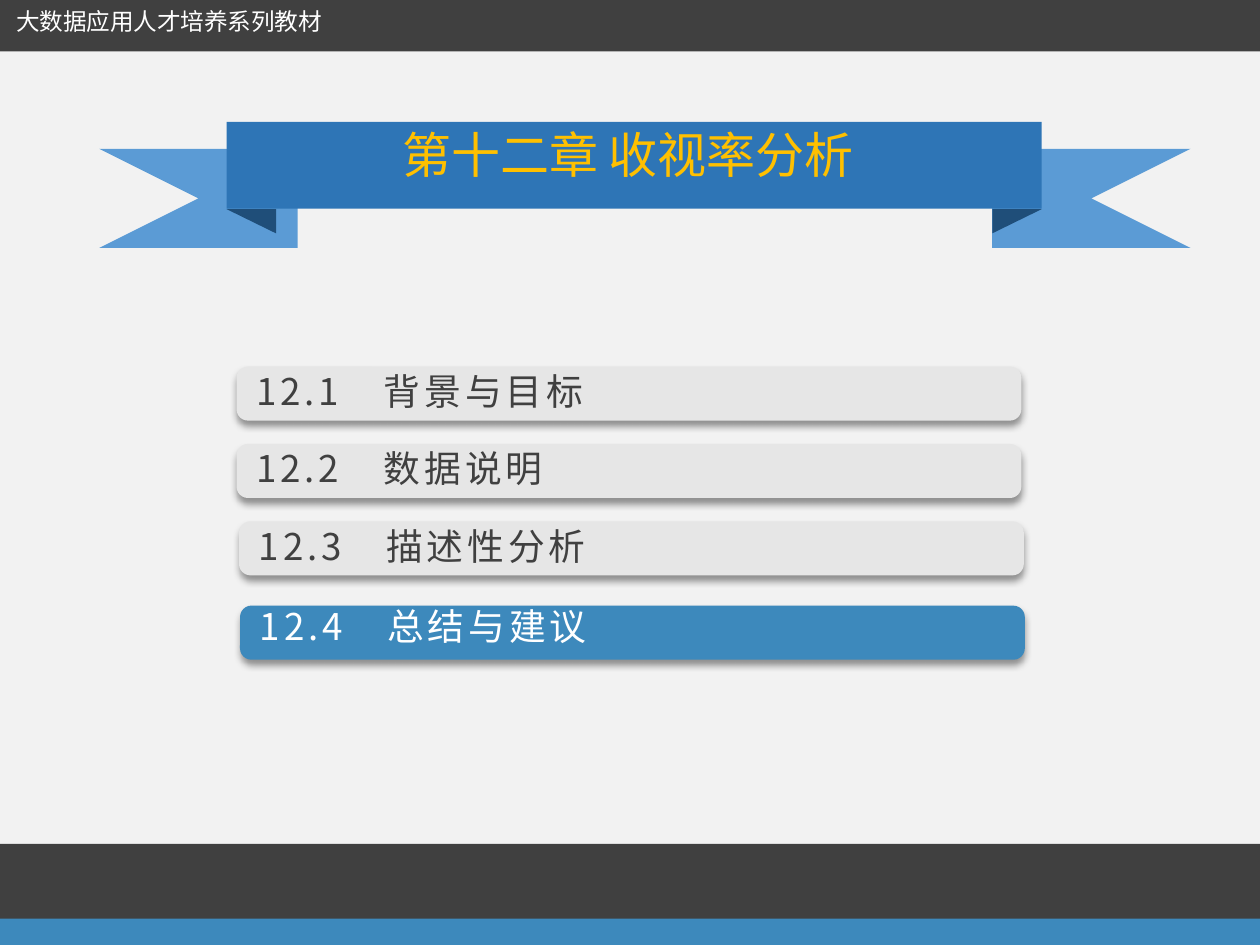
from dataclasses import dataclass

from lxml import etree
from pptx import Presentation
from pptx.dml.color import RGBColor
from pptx.enum.shapes import MSO_SHAPE
from pptx.enum.text import MSO_ANCHOR, MSO_AUTO_SIZE, PP_ALIGN
from pptx.oxml.ns import qn
from pptx.util import Cm, Pt

RECT = MSO_SHAPE.RECTANGLE
ROUND = MSO_SHAPE.ROUNDED_RECTANGLE
FOLD = MSO_SHAPE.RIGHT_TRIANGLE
TOP = MSO_ANCHOR.TOP
FIXED = MSO_AUTO_SIZE.NONE
LEFT, CENTER = PP_ALIGN.LEFT, PP_ALIGN.CENTER


@dataclass
class Theme:
    font: str = "Noto Sans CJK SC"
    back: str = "F2F2F2"
    dark: str = "404040"
    blue: str = "3D89BC"
    pale: str = "E6E6E6"
    white: str = "FFFFFF"
    gold: str = "FFC000"
    band: str = "2E75B6"
    wing: str = "5B9BD5"
    fold: str = "1F4E79"
    head: float = 28
    item: float = 21
    note: float = 13.5


theme = Theme()


def paint(shape, color):
    shape.shadow.inherit = False
    shape.fill.solid()
    shape.fill.fore_color.rgb = RGBColor.from_string(color)
    shape.line.fill.background()
    return shape


def write(box, words, size, color, align=LEFT, space=0):
    frame = box.text_frame
    setup = {
        "word_wrap": False,
        "auto_size": FIXED,
        "vertical_anchor": TOP,
        "margin_left": Cm(0.19),
        "margin_right": Cm(0.19),
        "margin_top": 0,
        "margin_bottom": 0,
    }
    for name, value in setup.items():
        setattr(frame, name, value)
    line = frame.paragraphs[0]
    line.alignment = align
    run = line.add_run()
    run.text = words
    for name, value in {"name": theme.font, "size": Pt(size), "bold": False}.items():
        setattr(run.font, name, value)
    run.font.color.rgb = RGBColor.from_string(color)
    props = run.font._element
    etree.SubElement(props, qn("a:ea"), typeface=theme.font)
    if space:
        props.set("spc", str(space))


deck = Presentation()
deck.slide_width, deck.slide_height = Cm(25.4), Cm(19.05)
slide = deck.slides.add_slide(deck.slide_layouts[5])
shapes = slide.shapes
slide.background.fill.solid()
slide.background.fill.fore_color.rgb = RGBColor.from_string(theme.back)

bars = [
    (-0.03, -0.03, 25.46, 1.07, theme.dark),
    (0, 17.01, 25.4, 1.53, theme.dark),
    (0, 18.52, 25.4, 0.53, theme.blue),
]
for x, y, w, h, color in bars:
    paint(shapes.add_shape(RECT, Cm(x), Cm(y), Cm(w), Cm(h)), color)
note = shapes.add_textbox(Cm(0.03), Cm(0.14), Cm(6.76), Cm(0.84))
write(note, "大数据应用人才培养系列教材", theme.note, theme.white, CENTER)

items = [
    ("12.1　背景与目标", 4.77, 7.39, 7.44, 7.32),
    ("12.2　数据说明", 4.77, 8.95, 8.99, 6.48),
    ("12.3　描述性分析", 4.82, 10.51, 10.55, 7.32),
    ("12.4　总结与建议", 4.84, 12.21, 12.17, 7.32),
]
for words, x, y, top, wide in items:
    live = words == items[-1][0]
    card = shapes.add_shape(ROUND, Cm(x), Cm(y), Cm(15.82), Cm(1.09))
    card.adjustments[0] = 0.21
    paint(card, theme.blue if live else theme.pale)
    glow = etree.SubElement(
        card.element.spPr.find(qn("a:effectLst")), qn("a:outerShdw"),
        blurRad=str(Pt(4)), dist=str(Pt(3)), dir="5400000", rotWithShape="0")
    tint = etree.SubElement(glow, qn("a:srgbClr"), val="000000")
    etree.SubElement(tint, qn("a:alpha"), val="40000")
    label = shapes.add_textbox(Cm(x + 0.21), Cm(top), Cm(wide), Cm(1.14))
    write(label, words, theme.item, theme.white if live else theme.dark, space=220)

mid = 12.79
for side in (-1, 1):
    outer, inner, notch = (mid + side * d for d in (10.88, 7.23, 9.1))
    pen = shapes.build_freeform(outer, 2.97, scale=float(Cm(1)))
    pen.add_line_segments(
        [(inner, 2.97), (inner, 4.72), (outer, 4.72), (notch, 3.84)], close=True)
    paint(pen.convert_to_shape(), theme.wing)
    fold = shapes.add_shape(
        FOLD, Cm(mid + side * 7.72 - 0.25), Cm(3.96), Cm(0.49), Cm(1))
    paint(fold, theme.fold)
    fold.rotation = 90 if side < 0 else 270
    frame = fold.element.spPr.find(qn("a:xfrm"))
    for key in ("flipV",) if side < 0 else ("flipH", "flipV"):
        frame.set(key, "1")

band = shapes.add_shape(RECT, Cm(4.57), Cm(2.46), Cm(16.43), Cm(1.75))
paint(band, theme.band)
title = shapes.title
spot = {"left": Cm(7.92), "top": Cm(2.5), "width": Cm(10.08), "height": Cm(0.89)}
for name, value in spot.items():
    setattr(title, name, value)
write(title, "第十二章 收视率分析", theme.head, theme.gold)
band.element.addnext(title.element)

deck.save("out.pptx")
